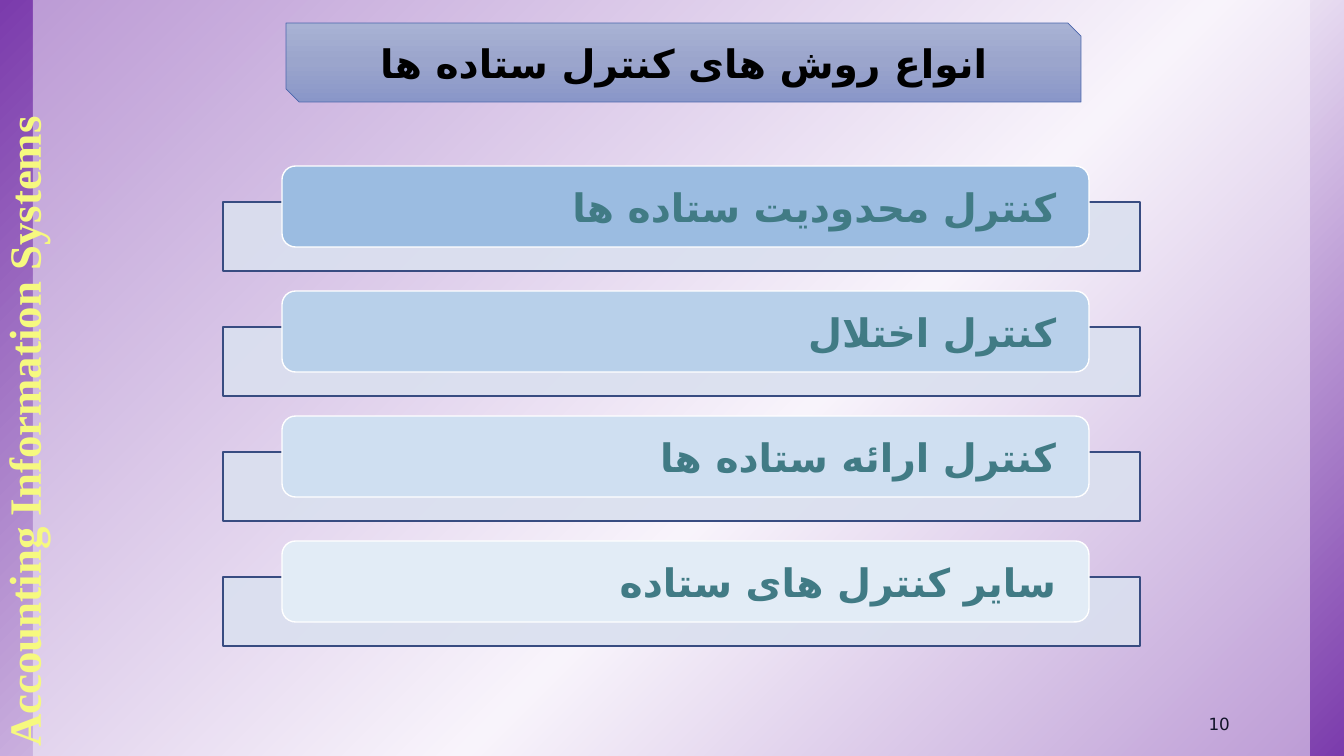
"""Builds the slide on the kinds of output control."""
import pptx
import pptx.dml.color
import pptx.enum.shapes
import pptx.enum.text
import pptx.oxml
import pptx.oxml.ns
import pptx.util
from pptx.oxml.ns import qn

SCALE = 914400 / 100.8
FONT = "League Spartan"
PERSIAN_FONT = "DejaVu Sans"
SHAPE = pptx.enum.shapes.MSO_SHAPE
ALIGN = pptx.enum.text.PP_ALIGN
ANCHOR = pptx.enum.text.MSO_ANCHOR
NS = pptx.oxml.ns.nsdecls("a")
CARDS = [
    ("کنترل محدودیت ستاده ها", "9BBCE1"),
    ("کنترل اختلال", "B8D0EA"),
    ("کنترل ارائه ستاده ها", "CFDFF1"),
    ("سایر کنترل های ستاده", "E2ECF6"),
]


def px(n):
    return pptx.util.Emu(round(n * SCALE))


def rgb(color):
    return pptx.dml.color.RGBColor.from_string(color)


def place(sp, box):
    sp.left, sp.top, sp.width, sp.height = map(px, box)


def set_gradient(sp, stops, angle):
    sp.fill.gradient()
    grad = sp._element.spPr.find(qn("a:gradFill"))
    gs_list = grad.find(qn("a:gsLst"))
    for gs in list(gs_list):
        gs_list.remove(gs)
    for pos, color in stops:
        gs_list.append(pptx.oxml.parse_xml(
            f'<a:gs {NS} pos="{pos * 1000}"><a:srgbClr val="{color}"/></a:gs>'))
    grad.find(qn("a:lin")).set("ang", str(angle * 60000))


def add_box(s, kind, box, fill=None, alpha=100, line=None, width=1):
    sp = s.shapes.add_shape(kind, *map(px, box))
    sp.shadow.inherit = False
    if fill:
        sp.fill.solid()
        sp.fill.fore_color.rgb = rgb(fill)
        if alpha < 100:
            clr = sp._element.spPr.find(qn("a:solidFill"))[0]
            clr.append(pptx.oxml.parse_xml(f'<a:alpha {NS} val="{alpha * 1000}"/>'))
    if line:
        sp.line.color.rgb = rgb(line)
        sp.line.width = pptx.util.Pt(width)
    else:
        sp.line.fill.background()
    return sp


def write(sp, text, size, color, align, anchor, font=FONT, bold=True, rtl=True, inset=0):
    tf = sp.text_frame
    tf.word_wrap = True
    tf.auto_size = pptx.enum.text.MSO_AUTO_SIZE.NONE
    tf.vertical_anchor = anchor
    tf.margin_left = tf.margin_right = px(inset)
    tf.margin_top = tf.margin_bottom = 0
    p = tf.paragraphs[0]
    p.alignment = align
    if rtl:
        p._p.get_or_add_pPr().set("rtl", "1")
    r = p.add_run()
    r.text = text
    r.font.name = font
    r.font.size = pptx.util.Pt(size)
    r.font.bold = bold
    r.font.color.rgb = rgb(color)
    r.font._element.append(pptx.oxml.parse_xml(f'<a:cs {NS} typeface="{PERSIAN_FONT}"/>'))


def add_background(s):
    sp = add_box(s, SHAPE.RECTANGLE, (0, 0, 1344, 756))
    set_gradient(sp, [(0, "7B3BAC"), (58, "F6F1FA"), (100, "7B3BAC")], 45)
    add_box(s, SHAPE.RECTANGLE, (33, 0, 1277, 756), "FBF8FD", 50)


def add_card(s, top, text, fill):
    add_box(s, SHAPE.RECTANGLE, (223, top + 36, 917, 69), "DAE0EF", 90, "384C81")
    sp = add_box(s, SHAPE.ROUNDED_RECTANGLE, (282, top, 807, 81), fill, line="FFFFFF")
    write(sp, text, 28, "417B85", ALIGN.RIGHT, ANCHOR.MIDDLE, inset=29)


def add_title(s, text):
    box = (286, 23, 795, 79)
    banner = add_box(s, SHAPE.SNIP_2_DIAG_RECTANGLE, box, line="4A66AC", width=0.5)
    set_gradient(banner, [(0, "A8B2D4"), (50, "9BA5CC"), (100, "8996C8")], 90)
    sp = s.shapes.title
    place(sp, box)
    write(sp, text, 28, "000000", ALIGN.CENTER, ANCHOR.MIDDLE)
    s.shapes._spTree.append(sp._element)


def add_course_name(s, text):
    sp = s.shapes.add_textbox(*map(px, (0, 106, 46, 651)))
    write(sp, text, 32, "F6F97F", ALIGN.CENTER, ANCHOR.MIDDLE,
          font="Times New Roman", rtl=False)
    sp.text_frame._txBody.bodyPr.set("vert", "vert270")


def add_page_number(s, text):
    sp = s.shapes.add_textbox(*map(px, (1121, 706, 122, 28)))
    write(sp, text, 12, "121429", ALIGN.RIGHT, ANCHOR.BOTTOM, bold=False, inset=13)


def main():
    prs = pptx.Presentation()
    prs.slide_width, prs.slide_height = px(1344), px(756)
    s = prs.slides.add_slide(prs.slide_layouts[5])
    add_background(s)
    add_page_number(s, "10")
    for i, (text, fill) in enumerate(CARDS):
        add_card(s, 166 + 125 * i, text, fill)
    add_title(s, "انواع روش های کنترل ستاده ها")
    add_course_name(s, "Accounting Information Systems")
    prs.save("out.pptx")


if __name__ == "__main__":
    main()
